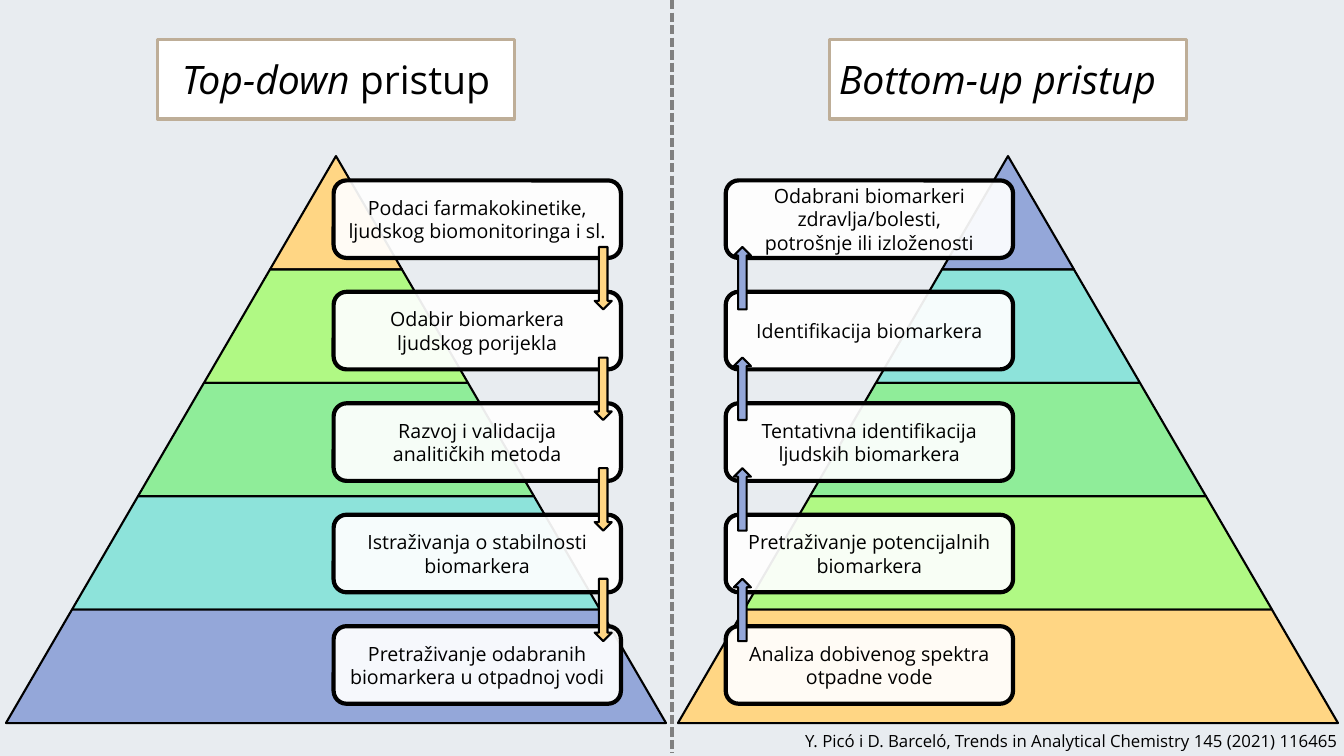
from lxml import etree
from pptx import Presentation
from pptx.dml.color import RGBColor
from pptx.enum.dml import MSO_LINE
from pptx.enum.shapes import MSO_CONNECTOR, MSO_SHAPE
from pptx.enum.text import MSO_ANCHOR, MSO_AUTO_SIZE, PP_ALIGN
from pptx.oxml.ns import qn
from pptx.util import Pt

TRAPEZOID, BOX = MSO_SHAPE.TRAPEZOID, MSO_SHAPE.ROUNDED_RECTANGLE
DOWN, UP = MSO_SHAPE.DOWN_ARROW, MSO_SHAPE.UP_ARROW
STRAIGHT, DASH = MSO_CONNECTOR.STRAIGHT, MSO_LINE.SQUARE_DOT
LEFT, CENTER, MIDDLE = PP_ALIGN.LEFT, PP_ALIGN.CENTER, MSO_ANCHOR.MIDDLE
NO_AUTOFIT = MSO_AUTO_SIZE.NONE

COLORS = {
    "background": "E8ECF0", "black": "000000", "white": "FFFFFF",
    "title_line": "BEAE98", "divider": "808080",
    "orange": "FFD684", "lime": "B0F984", "green": "8FED99",
    "teal": "8DE3DA", "blue": "94A7D9",
}
RGB = {name: RGBColor.from_string(value) for name, value in COLORS.items()}
TIERS = ["orange", "lime", "green", "teal", "blue"]

TIER_TOP, TIER_H, TIER_W = 111.5, 81, 94.3
BOX_TOP, BOX_STEP, BOX_W, BOX_H = 128.9, 79.6, 205.2, 55.4
ARROW_TOP, ARROW_STEP, ARROW_W, ARROW_H = 176.4, 79, 12.2, 44.6
TITLE_W = 255

# The runs of a title are (text, italic)
SIDES = [
    dict(center=240, box_left=238.3, arrow_left=424.8, arrow=DOWN,
         arrow_color="orange", tiers=TIERS, heading=1, right_inset=0,
         title=[("Top-down ", True), ("pristup", False)],
         steps=["Podaci farmakokinetike, ljudskog biomonitoringa i sl.",
                "Odabir biomarkera\nljudskog porijekla",
                "Razvoj i validacija\nanalitičkih metoda",
                "Istraživanja o stabilnosti biomarkera",
                "Pretraživanje odabranih biomarkera u otpadnoj vodi"]),
    dict(center=720, box_left=518.4, arrow_left=524.2, arrow=UP,
         arrow_color="blue", tiers=TIERS[::-1], heading=3, right_inset=15,
         title=[("Bottom-up pristup", True)],
         steps=["Odabrani biomarkeri zdravlja/bolesti,\n"
                "potrošnje ili izloženosti",
                "Identifikacija biomarkera",
                "Tentativna identifikacija ljudskih biomarkera",
                "Pretraživanje potencijalnih biomarkera",
                "Analiza dobivenog spektra otpadne vode"]),
]


def add_filled(kind, left, top, width, height, fill, line_width):
    sp = s.shapes.add_shape(kind, Pt(left), Pt(top), Pt(width), Pt(height))
    sp.shadow.inherit = False
    sp.fill.solid()
    sp.fill.fore_color.rgb = RGB[fill]
    sp.line.color.rgb = RGB["black"]
    sp.line.width = Pt(line_width)
    return sp


def format_text(tf, size, align):
    for p in tf.paragraphs:
        p.alignment = align
        p.space_before = Pt(0)
        for r in p.runs:
            r.font.name = "Open Sans"
            r.font.size = Pt(size)
            r.font.bold = False
            r.font.color.rgb = RGB["black"]


prs = Presentation()
prs.slide_width, prs.slide_height = Pt(960), Pt(540)
s = prs.slides.add_slide(prs.slide_layouts.get_by_name("Comparison"))
s.background.fill.solid()
s.background.fill.fore_color.rgb = RGB["background"]

headings = {ph.placeholder_format.idx: ph for ph in s.placeholders}
for idx in (0, 2, 4):
    unused = headings[idx].element
    unused.getparent().remove(unused)

for side in SIDES:
    # Title
    sp = headings[side["heading"]]
    sp.left, sp.top = Pt(side["center"] - TITLE_W / 2), Pt(28.1)
    sp.width, sp.height = Pt(TITLE_W), Pt(56.9)
    sp.fill.solid()
    sp.fill.fore_color.rgb = RGB["white"]
    sp.line.color.rgb = RGB["title_line"]
    sp.line.width = Pt(2.25)
    tf = sp.text_frame
    tf.word_wrap = False
    tf.auto_size = NO_AUTOFIT
    tf.vertical_anchor = MIDDLE
    tf.margin_left = Pt(0)
    tf.margin_right = Pt(side["right_inset"])
    for text, italic in side["title"]:
        r = tf.paragraphs[0].add_run()
        r.text = text
        r.font.italic = italic
    format_text(tf, 28, CENTER)

    # Pyramid
    for i, color in enumerate(side["tiers"]):
        width = TIER_W * (i + 1)
        sp = add_filled(TRAPEZOID, side["center"] - width / 2,
                        TIER_TOP + i * TIER_H, width, TIER_H, color, 1.5)
        sp.adjustments[0] = TIER_W / 2 / TIER_H

    # Steps
    for i, step in enumerate(side["steps"]):
        sp = add_filled(BOX, side["box_left"], BOX_TOP + i * BOX_STEP,
                        BOX_W, BOX_H, "white", 3)
        rgb = sp.fill._xPr.find(qn("a:solidFill"))[0]
        etree.SubElement(rgb, qn("a:alpha")).set("val", "92000")
        tf = sp.text_frame
        tf.text = step
        tf.word_wrap = True
        tf.vertical_anchor = MIDDLE
        format_text(tf, 14, CENTER)

    # Arrows between steps
    for i in range(len(side["steps"]) - 1):
        add_filled(side["arrow"], side["arrow_left"],
                   ARROW_TOP + i * ARROW_STEP, ARROW_W, ARROW_H,
                   side["arrow_color"], 1.5)

# Divider
divider = s.shapes.add_connector(STRAIGHT, Pt(480), Pt(0), Pt(480), Pt(538))
divider.line.color.rgb = RGB["divider"]
divider.line.width = Pt(2.25)
divider.line.dash_style = DASH
etree.SubElement(divider.element.spPr, qn("a:effectLst"))

# Citation
citation = s.shapes.add_textbox(Pt(568), Pt(518.4), Pt(392), Pt(21.6))
tf = citation.text_frame
tf.text = ("Y. Picó i D. Barceló, Trends in Analytical Chemistry "
           "145 (2021) 116465")
tf.word_wrap = True
tf.margin_right = Pt(0)
format_text(tf, 12, LEFT)

prs.save("out.pptx")
